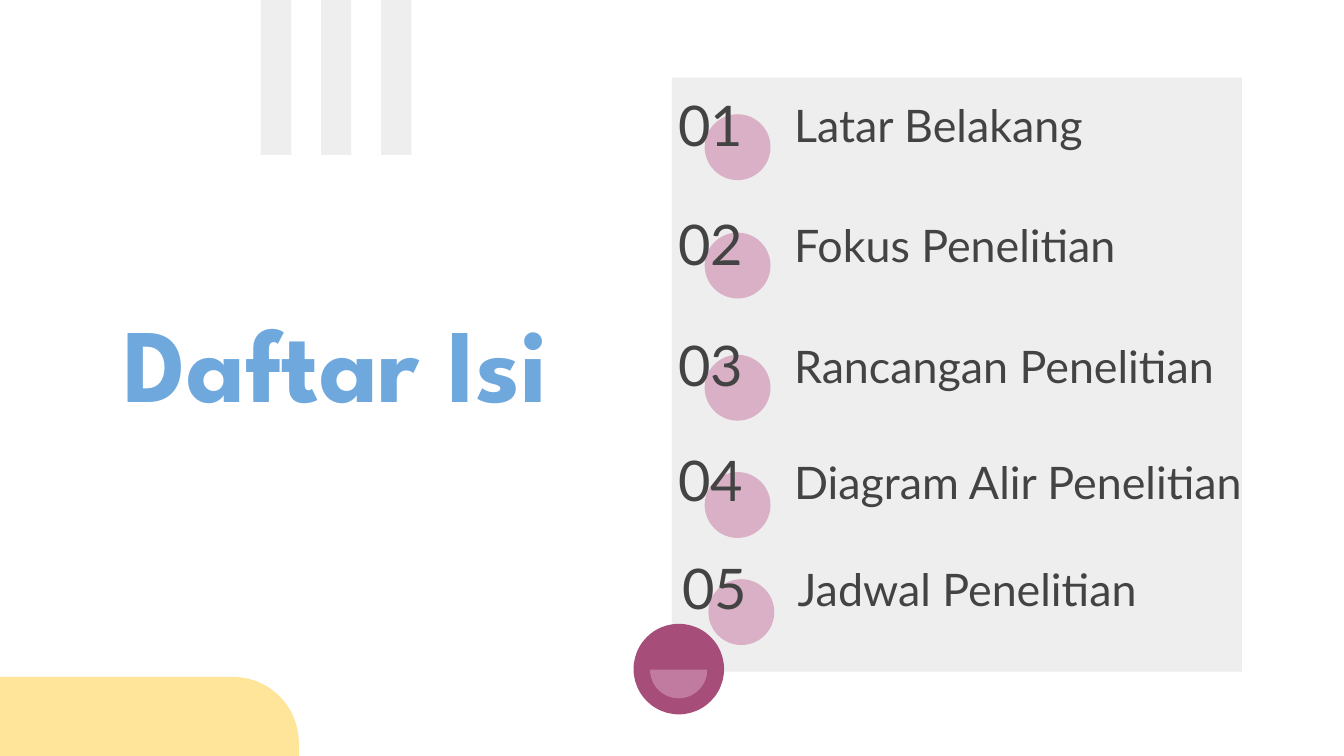
import math

from pptx import Presentation
from pptx.dml.color import RGBColor
from pptx.enum.shapes import MSO_SHAPE
from pptx.enum.text import MSO_ANCHOR, MSO_AUTO_SIZE, PP_ALIGN
from pptx.util import Pt

RECTANGLE, OVAL = MSO_SHAPE.RECTANGLE, MSO_SHAPE.OVAL
LEFT, CENTER, RIGHT = PP_ALIGN.LEFT, PP_ALIGN.CENTER, PP_ALIGN.RIGHT
MIDDLE = MSO_ANCHOR.MIDDLE
NO_AUTOFIT = MSO_AUTO_SIZE.NONE
TITLE_ONLY = 5

GREY = RGBColor(0xEE, 0xEE, 0xEE)
YELLOW = RGBColor(0xFF, 0xE5, 0x99)
PLUM = RGBColor(0xA6, 0x4D, 0x79)
MAUVE = RGBColor(0xC2, 0x7B, 0xA0)
PINK = RGBColor(0xDA, 0xB0, 0xC6)
BLUE = RGBColor(0x6F, 0xA8, 0xDC)
DARK = RGBColor(0x43, 0x43, 0x43)

SLIDE_WIDTH, SLIDE_HEIGHT = 720, 405
BAR_COUNT, BAR_LEFT, BAR_STEP = 3, 139.8, 32.2
DOT_SIZE = 35.3

# Label, shift to the right, tops of dot, number and label
ENTRIES = [
    ("Latar Belakang", 0, 61.2, 46.8, 54.7),
    ("Fokus Penelitian", 0, 124.6, 110.7, 119),
    ("Rancangan Penelitian", 0, 190.1, 175, 183.8),
    ("Diagram Alir Penelitian", 0, 252.9, 237.1, 246),
    ("Jadwal Penelitian", 2, 310.3, 294.5, 303.2),
]


def paint(shape, color):
    shape.shadow.inherit = False
    shape.fill.solid()
    shape.fill.fore_color.rgb = color
    shape.line.fill.background()


def add_shape(page, kind, left, top, width, height, color):
    shape = page.shapes.add_shape(kind, Pt(left), Pt(top), Pt(width), Pt(height))
    paint(shape, color)


def add_outline(page, points, color):
    start, *rest = [(Pt(x), Pt(y)) for x, y in points]
    builder = page.shapes.build_freeform(*start)
    builder.add_line_segments(rest, close=True)
    paint(builder.convert_to_shape(), color)


def arc(center_x, center_y, radius, first, last, steps=40):
    """Return points on a circle; degrees run clockwise from the right."""
    angles = [math.radians(first + (last - first) * i / steps) for i in range(steps + 1)]
    return [(center_x + radius * math.cos(a), center_y + radius * math.sin(a)) for a in angles]


def write(box, text, *, size, font, color, align=LEFT, bold=False, spacing=1.0):
    frame = box.text_frame
    frame.word_wrap = True
    frame.auto_size = NO_AUTOFIT
    frame.vertical_anchor = MIDDLE
    frame.margin_left = frame.margin_right = Pt(7.2)
    frame.margin_top = frame.margin_bottom = Pt(7.2)
    para = frame.paragraphs[0]
    para.alignment = align
    para.line_spacing = spacing
    span = para.add_run()
    span.text = text
    span.font.size = Pt(size)
    span.font.name = font
    span.font.bold = bold
    span.font.color.rgb = color


def add_text(page, text, left, top, width, height, **style):
    box = page.shapes.add_textbox(Pt(left), Pt(top), Pt(width), Pt(height))
    write(box, text, font="Lato", color=DARK, **style)


def add_decoration(page):
    for index in range(BAR_COUNT):
        add_shape(page, RECTANGLE, BAR_LEFT + index * BAR_STEP, 0, 16.2, 83, GREY)
    add_shape(page, RECTANGLE, 360, 41.6, 305.3, 318.2, GREY)
    corner = arc(124.8, 398, 35.3, -90, 0)
    add_outline(page, [(0, SLIDE_HEIGHT), (0, 362.7), *corner, (160.1, SLIDE_HEIGHT)], YELLOW)
    add_shape(page, OVAL, 339.4, 334.2, 48.5, 48.5, PLUM)
    add_outline(page, arc(363.6, 358.8, 15.3, 0, 180), MAUVE)


def set_title(page, text):
    title = page.shapes.title
    title.left, title.top = Pt(20.9), Pt(135.4)
    title.width, title.height = Pt(318.2), Pt(128.2)
    write(title, text, size=56, font="League Spartan", color=BLUE,
          align=CENTER, bold=True, spacing=0.8)


def add_entry(page, number, label, shift, dot_top, number_top, label_top):
    add_shape(page, OVAL, 377.5 + shift, dot_top, DOT_SIZE, DOT_SIZE, PINK)
    add_text(page, f"{number:02}", 329 + shift, number_top, 76.3, 39.6, size=30, align=RIGHT)
    add_text(page, label, 418.3 + shift, label_top, 280, 23.8, size=24)


def main():
    deck = Presentation()
    deck.slide_width, deck.slide_height = Pt(SLIDE_WIDTH), Pt(SLIDE_HEIGHT)
    page = deck.slides.add_slide(deck.slide_layouts[TITLE_ONLY])
    add_decoration(page)
    set_title(page, "Daftar Isi")
    for number, entry in enumerate(ENTRIES, start=1):
        add_entry(page, number, *entry)
    deck.save("out.pptx")


if __name__ == "__main__":
    main()
